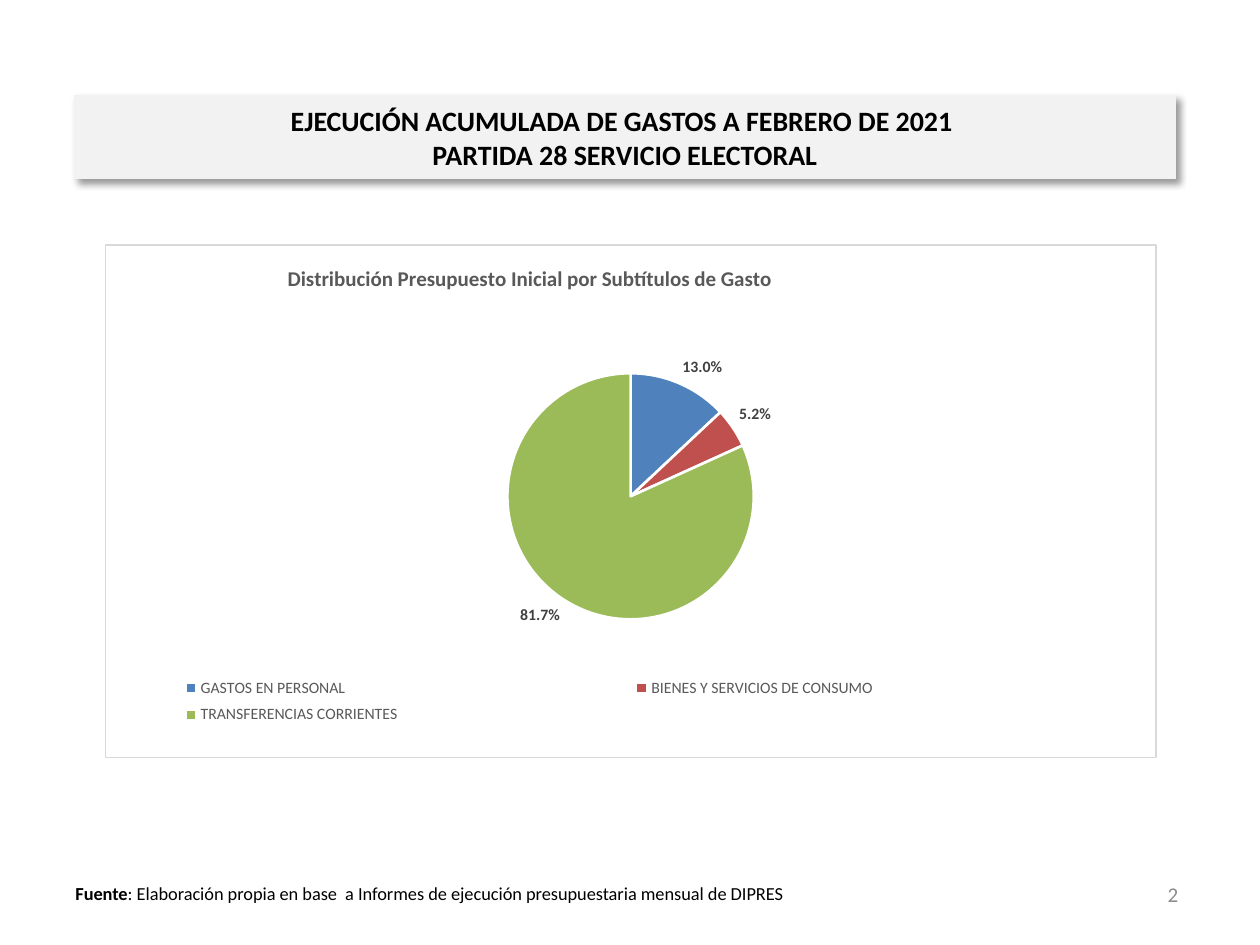
from lxml.etree import SubElement
from pptx import Presentation
from pptx.chart.data import CategoryChartData
from pptx.dml.color import RGBColor
from pptx.enum.chart import XL_CHART_TYPE, XL_LABEL_POSITION, XL_LEGEND_POSITION
from pptx.enum.text import MSO_ANCHOR, PP_ALIGN
from pptx.oxml import parse_xml
from pptx.oxml.ns import nsdecls, qn
from pptx.util import Inches, Pt

LABEL_WIDTH = 80  # budget labels are fixed-width fields
SPENDING = [
    ("GASTOS EN PERSONAL", 13, "4F81BD"),
    ("BIENES Y SERVICIOS DE CONSUMO", 5.2, "C0504D"),
    ("TRANSFERENCIAS CORRIENTES", 81.7, "9BBB59"),
]


def rgb(value):
    return RGBColor.from_string(value)


def set_layout(element, **fractions):
    """Place a chart part by fractions of the chart area."""
    layout = element.get_or_add_layout() if hasattr(element, "get_or_add_layout") else element
    for old in list(layout):
        layout.remove(old)
    manual = SubElement(layout, qn("c:manualLayout"))
    for axis in "xy":
        SubElement(manual, qn(f"c:{axis}Mode")).set("val", "edge")
    for key, fraction in fractions.items():
        SubElement(manual, qn(f"c:{key}")).set("val", str(fraction))


def layout_after(element, *predecessors):
    """Return the layout of a chart part, created in schema order if missing."""
    layout = element.find(qn("c:layout"))
    if layout is None:
        layout = parse_xml(f"<c:layout {nsdecls('c')}/>")
        before = [child for child in element if child.tag in map(qn, predecessors)]
        element.insert(len(before), layout)
    return layout


class BudgetSlide:
    font_name = "Calibri"

    def __init__(self, presentation):
        self.slide = presentation.slides.add_slide(presentation.slide_layouts[5])

    def style(self, font, size, color, bold=False):
        font.name, font.size, font.bold = self.font_name, Pt(size), bold
        font.color.rgb = rgb(color)

    def title(self, text, left, top, width, height):
        banner = self.slide.shapes.title
        banner.left, banner.top = Inches(left), Inches(top)
        banner.width, banner.height = Inches(width), Inches(height)
        banner.fill.solid()
        banner.fill.fore_color.rgb = rgb("F2F2F2")
        banner.line.color.rgb = rgb("F2F2F2")
        banner.line.width = Pt(0.75)
        banner._element.spPr.append(parse_xml(
            f'<a:effectLst {nsdecls("a")}><a:outerShdw blurRad="{Pt(4)}" dist="{Pt(3)}" '
            'dir="2700000" algn="tl" rotWithShape="0"><a:srgbClr val="000000">'
            '<a:alpha val="40000"/></a:srgbClr></a:outerShdw></a:effectLst>'))
        frame = banner.text_frame
        frame.text = text
        frame.vertical_anchor = MSO_ANCHOR.MIDDLE
        heading = frame.paragraphs[0]
        heading.alignment = PP_ALIGN.CENTER
        self.style(heading.font, 16, "000000", bold=True)

    def text(self, runs, left, top, width, height, size, color,
             align=PP_ALIGN.LEFT, anchor=MSO_ANCHOR.TOP):
        """Add one paragraph from (text, bold) pairs."""
        frame = self.slide.shapes.add_textbox(
            Inches(left), Inches(top), Inches(width), Inches(height)).text_frame
        frame.word_wrap = True
        frame.vertical_anchor = anchor
        paragraph = frame.paragraphs[0]
        paragraph.alignment = align
        self.style(paragraph.font, size, color)
        for words, bold in runs:
            run = paragraph.add_run()
            run.text = words
            run.font.bold = bold

    def pie(self, title, spending, left, top, width, height):
        data = CategoryChartData()
        data.categories = [label.ljust(LABEL_WIDTH) for label, _, _ in spending]
        data.add_series("Series 1", [share for _, share, _ in spending])
        chart = self.slide.shapes.add_chart(
            XL_CHART_TYPE.PIE, Inches(left), Inches(top),
            Inches(width), Inches(height), data).chart
        self.style(chart.font, 10, "000000")
        self.chart_frame(chart)

        chart.has_title = True
        heading = chart.chart_title.text_frame
        heading.text = title
        self.style(heading.paragraphs[0].font, 12, "595959", bold=True)
        set_layout(layout_after(chart.chart_title._element, "c:tx"), x=0.17, y=0.03)

        chart.has_legend = True
        legend = chart.legend
        legend.position = XL_LEGEND_POSITION.BOTTOM
        legend.include_in_layout = False
        self.style(legend.font, 9, "595959")
        set_layout(layout_after(legend._element, "c:legendPos", "c:legendEntry"),
                   x=0.04, y=0.83, w=0.9, h=0.12)

        plot = chart.plots[0]
        plot.vary_by_categories = True
        plot_area = plot._element.getparent()
        layout = layout_after(plot_area)
        set_layout(layout, x=0.01, y=0.25, w=0.98, h=0.48)
        target = parse_xml(f'<c:layoutTarget {nsdecls("c")} val="inner"/>')
        layout[0].insert(0, target)

        for index, (_, _, color) in enumerate(spending):
            slice_format = plot.series[0].points[index].format
            slice_format.fill.solid()
            slice_format.fill.fore_color.rgb = rgb(color)
            slice_format.line.color.rgb = rgb("FFFFFF")
            slice_format.line.width = Pt(1.5)

        labels = plot.series[0].data_labels
        labels.show_value = True
        labels.number_format = '0.0"%"'
        labels.number_format_is_linked = False
        labels.position = XL_LABEL_POSITION.OUTSIDE_END
        self.style(labels.font, 9, "404040", bold=True)

    def chart_frame(self, chart):
        chart._chartSpace.find(qn("c:chart")).addnext(parse_xml(
            f'<c:spPr {nsdecls("c", "a")}><a:solidFill><a:srgbClr val="FFFFFF"/></a:solidFill>'
            f'<a:ln w="{Pt(0.75)}"><a:solidFill><a:srgbClr val="D9D9D9"/></a:solidFill></a:ln>'
            '</c:spPr>'))


def main():
    presentation = Presentation()
    presentation.slide_width, presentation.slide_height = Inches(10), Inches(7.5)
    page = BudgetSlide(presentation)
    page.text([("Fuente", True),
               (": Elaboración propia en base  a Informes de ejecución "
                "presupuestaria mensual de DIPRES", False)],
              0.5, 6.95, 5.91, 0.28, 10.5, "000000")
    page.text([("2", False)], 7.12, 6.9, 2.33, 0.4, 12, "8C8C8C",
              PP_ALIGN.RIGHT, MSO_ANCHOR.MIDDLE)
    page.title("EJECUCIÓN ACUMULADA DE GASTOS A FEBRERO DE 2021 \vPARTIDA 28 SERVICIO ELECTORAL",
               0.59, 0.76, 8.74, 0.66)
    page.pie("Distribución Presupuesto Inicial por Subtítulos de Gasto", SPENDING,
             0.83, 1.94, 8.35, 4.08)
    presentation.save("out.pptx")


if __name__ == "__main__":
    main()
